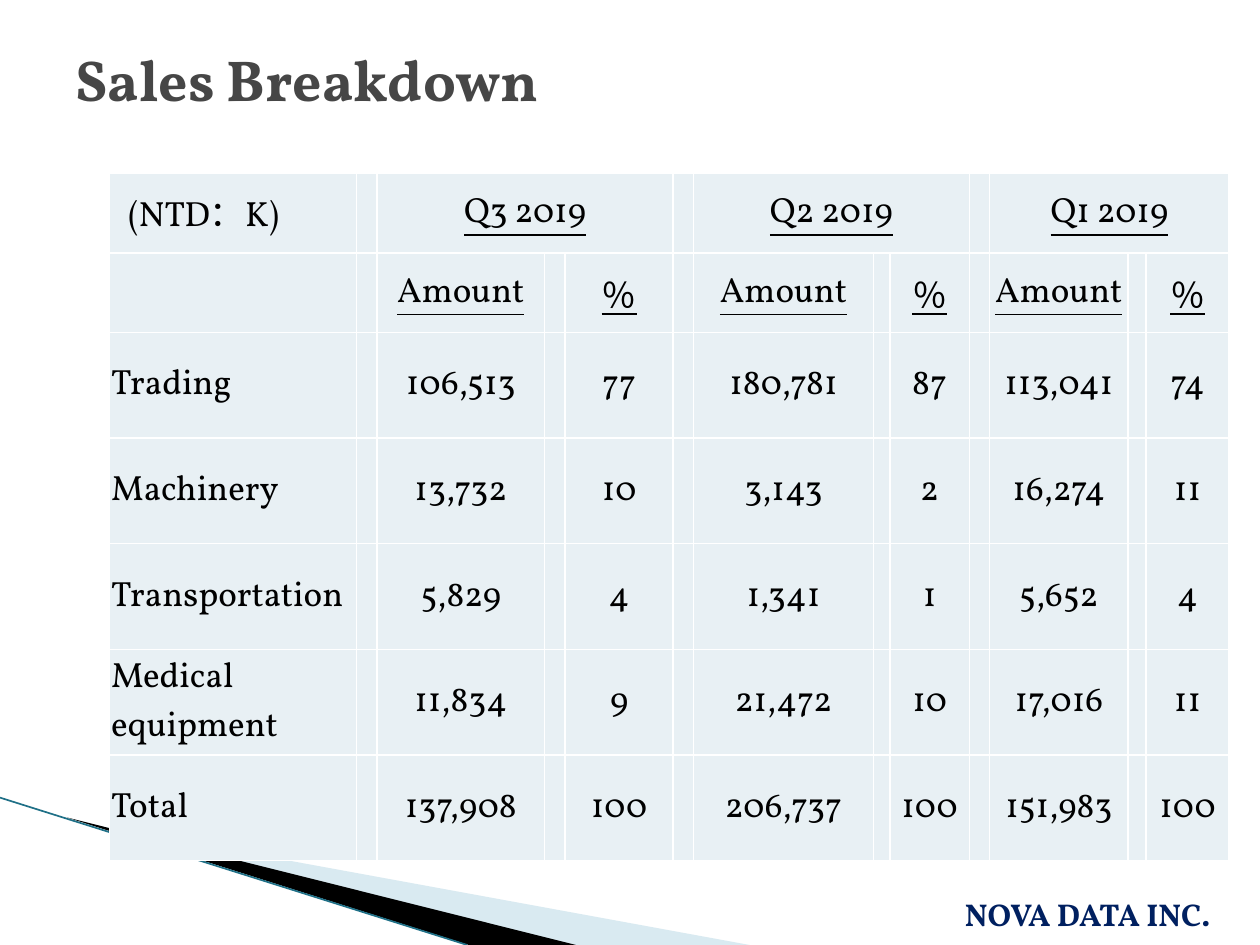
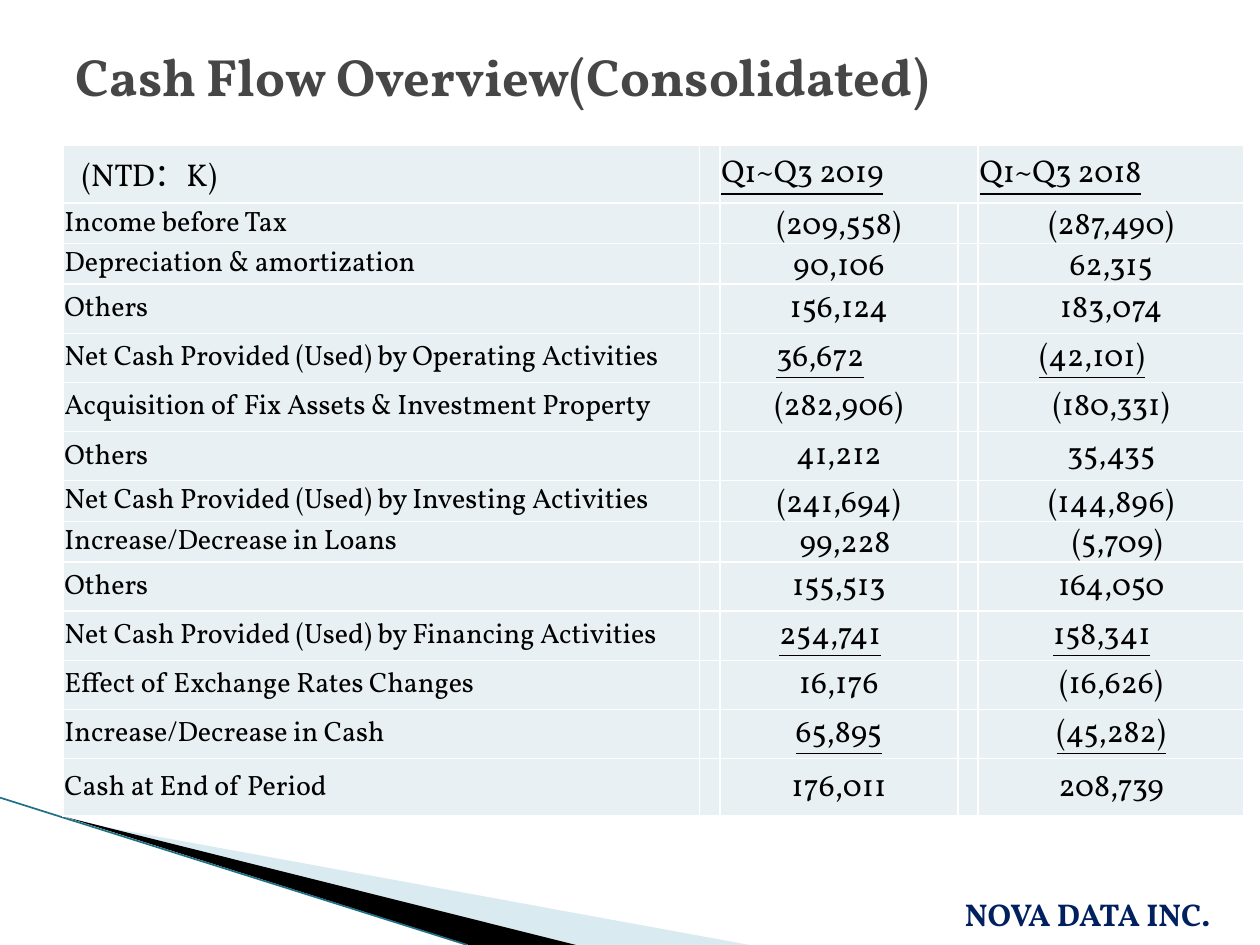
from lxml.etree import SubElement
from pptx import Presentation
from pptx.dml.color import RGBColor
from pptx.enum.shapes import MSO_CONNECTOR
from pptx.enum.text import MSO_ANCHOR, MSO_AUTO_SIZE, PP_ALIGN as AL
from pptx.oxml import parse_xml
from pptx.oxml.ns import nsdecls, qn
from pptx.util import Cm, Pt

COLORS = {"title": "464646", "brand": "002060", "text": "000000", "cell": "E8F0F4",
          "border": "FFFFFF", "wedge": "A0CBDC", "edge": "1F7087"}
FONT = "Vollkorn"
BRAND = "NOVA DATA INC."
INSET = 0.03


def color(name):
    return RGBColor.from_string(COLORS[name])


def write(tf, text, size=18, name="text", bold=False, underline=False, align=None, tab=None):
    """Write one formatted line; tab is the distance of a tab stop in cm."""
    p = tf.paragraphs[0]
    if tab:
        tabs = SubElement(p._p.get_or_add_pPr(), qn("a:tabLst"))
        SubElement(tabs, qn("a:tab"), pos=str(Cm(tab)), algn="l")
    p.alignment = align
    r = p.add_run()
    r.text = text
    r.font.name, r.font.size = FONT, Pt(size)
    r.font.bold, r.font.underline = bold, underline
    r.font.color.rgb = color(name)


class Deck:
    def __init__(self):
        self.prs = Presentation()
        self.prs.slide_width, self.prs.slide_height = Cm(25.4), Cm(19.05)
        self.s = None

    def slide(self, title, size):
        self.s = self.prs.slides.add_slide(self.prs.slide_layouts[5])
        self.corner()
        self.title(title, size)
        self.footer()

    def title(self, text, size):
        sp = self.s.shapes.title
        sp.left, sp.top, sp.width, sp.height = Cm(1.27), Cm(0.76), Cm(22.86), Cm(3.18)
        tf = sp.text_frame
        tf.auto_size, tf.vertical_anchor = MSO_AUTO_SIZE.NONE, MSO_ANCHOR.TOP
        write(tf, text, size, "title", bold=True, align=AL.LEFT)

    def footer(self):
        sp = self.s.shapes.add_textbox(Cm(19.2), Cm(17.91), Cm(6.02), Cm(1.02))
        sp.text_frame.word_wrap = True
        write(sp.text_frame, BRAND, 18, "brand", bold=True)

    def wedge(self, points, name, alpha=None):
        start, *rest = [(Cm(x), Cm(y)) for x, y in points]
        fb = self.s.shapes.build_freeform(*start)
        fb.add_line_segments(rest)
        sp = fb.convert_to_shape()
        sp.shadow.inherit = False
        sp.line.fill.background()
        sp.fill.solid()
        sp.fill.fore_color.rgb = color(name)
        if alpha:
            clr = sp.fill._xPr.find(".//" + qn("a:srgbClr"))
            SubElement(clr, qn("a:alpha"), val=str(alpha * 1000))

    def corner(self):
        self.wedge([(1.4, 16.54), (15.11, 19.05), (11.58, 19.05)], "wedge", alpha=40)
        self.wedge([(1.35, 16.48), (11.61, 19.05), (9.45, 19.05)], "text")
        line = self.s.shapes.add_connector(MSO_CONNECTOR.STRAIGHT, Cm(0), Cm(16.08),
                                           Cm(9.42), Cm(19.05))
        line.line.color.rgb = color("edge")
        line.line.width = Pt(0.95)
        SubElement(line._element.spPr, qn("a:effectLst"))

    def table(self, left, top, cols, rows):
        """Add a table of plain cells; cols and rows are sizes in cm."""
        frame = self.s.shapes.add_table(len(rows), len(cols), Cm(left), Cm(top),
                                        Cm(sum(cols)), Cm(sum(rows)))
        tbl = frame.table
        tbl.first_row = tbl.horz_banding = False
        for col, width in zip(tbl.columns, cols):
            col.width = Cm(width)
        for row, height in zip(tbl.rows, rows):
            row.height = Cm(height)
        for cell in tbl.iter_cells():
            cell.fill.solid()
            cell.fill.fore_color.rgb = color("cell")
            cell.vertical_anchor = MSO_ANCHOR.MIDDLE
            cell.margin_left = cell.margin_right = cell.margin_top = Cm(INSET)
            cell.margin_bottom = 0
            for i, side in enumerate("LRTB"):
                cell._tc.tcPr.insert(i, parse_xml(
                    f'<a:ln{side} {nsdecls("a")} w="12700"><a:solidFill>'
                    f'<a:srgbClr val="{COLORS["border"]}"/></a:solidFill></a:ln{side}>'))
        return tbl

    def cell(self, tbl, row, col, text, indent=INSET, span=1, **fmt):
        cell = tbl.cell(row, col)
        if span > 1:
            cell.merge(tbl.cell(row, col + span - 1))
        cell.margin_left = Cm(indent)
        write(cell.text_frame, text, **fmt)


def sales_slide(deck):
    deck.slide("Sales Breakdown", 33)
    cols = [4.98, 0.41, 3.38, 0.41, 2.18, 0.41, 3.63, 0.33, 1.6, 0.41, 2.79, 0.36, 1.68]
    tbl = deck.table(2.21, 3.5, cols, [1.6] * 2 + [2.13] * 5)
    head = dict(size=20, underline=True, align=AL.CENTER)

    # Two header rows: quarters, then amount and share
    deck.cell(tbl, 0, 0, "(NTD：K)", indent=0.38, size=20)
    for i, quarter in enumerate(["Q3 2019", "Q2 2019", "Q1 2019"]):
        col = 2 + 4 * i
        deck.cell(tbl, 0, col, quarter, span=3, **head)
        deck.cell(tbl, 1, col, "Amount", **head)
        deck.cell(tbl, 1, col + 2, "％", **head)

    # Underlined gaps between the headers
    for row, col in [(0, 5), (1, 3), (1, 5), (1, 7), (1, 11)]:
        deck.cell(tbl, row, col, "\t", size=20, underline=True, tab=cols[col] - 0.08)

    # Figures fill every second column
    sales = [
        ("Trading", "106,513", "77", "180,781", "87", "113,041", "74"),
        ("Machinery", "13,732", "10", "3,143", "2", "16,274", "11"),
        ("Transportation", "5,829", "4", "1,341", "1", "5,652", "4"),
        ("Medical equipment", "11,834", "9", "21,472", "10", "17,016", "11"),
        ("Total", "137,908", "100", "206,737", "100", "151,983", "100"),
    ]
    for row, values in enumerate(sales, 2):
        for i, value in enumerate(values):
            deck.cell(tbl, row, 2 * i, value, size=20, align=AL.CENTER if i else AL.JUSTIFY)


def cash_flow_slide(deck):
    deck.slide("Cash Flow Overview(Consolidated)", 30)
    short, normal, tall = 0.82, 0.99, 1.16
    rows = ([tall] + [short] * 2 + [normal] * 4 + [short] * 2 + [normal] * 4 + [tall])
    tbl = deck.table(1.27, 2.93, [12.83, 0.41, 4.8, 0.41, 5.36], rows)

    # Header row
    deck.cell(tbl, 0, 0, "(NTD：K)", indent=0.38)
    deck.cell(tbl, 0, 2, "Q1~Q3 2019", span=2, underline=True)
    deck.cell(tbl, 0, 4, "Q1~Q3 2018", underline=True)

    # Label, 2019, 2018
    flows = [
        ("Income before Tax", "(209,558)", "(287,490)"),
        ("Depreciation & amortization", "90,106", "62,315"),
        ("Others", "156,124", "183,074"),
        ("Net Cash Provided (Used) by Operating Activities", "36,672", "(42,101)"),
        ("Acquisition of Fix Assets & Investment Property", "(282,906)", "(180,331)"),
        ("Others", "41,212", "35,435"),
        ("Net Cash Provided (Used) by Investing Activities", "(241,694)", "(144,896)"),
        ("Increase/Decrease in Loans", "99,228", "(5,709)"),
        ("Others", "155,513", "164,050"),
        ("Net Cash Provided (Used) by Financing Activities", "254,741", "158,341"),
        ("Effect of Exchange Rates Changes", "16,176", "(16,626)"),
        ("Increase/Decrease in Cash", "65,895", "(45,282)"),
        ("Cash at End of Period", "176,011", "208,739"),
    ]
    subtotals = {4, 7, 10, 12}
    # Underlines that run past the figure: indent and length in cm
    long_rules = {(4, 2): (1.14, 2.52), (4, 4): (1.23, 2.9),
                  (10, 2): (1.2, 2.42), (10, 4): (1.51, 2.34)}
    loans_row = 8
    for row, (label, *values) in enumerate(flows, 1):
        deck.cell(tbl, row, 0, label, size=16)
        for col, value in zip((2, 4), values):
            if (row, col) in long_rules:
                indent, length = long_rules[row, col]
                deck.cell(tbl, row, col, value + "\t", indent=indent, underline=True, tab=length)
            else:
                deck.cell(tbl, row, col, value, indent=0.28 if row == loans_row else INSET,
                          underline=row in subtotals, align=AL.CENTER)


def main():
    deck = Deck()
    sales_slide(deck)
    cash_flow_slide(deck)
    deck.prs.save("out.pptx")


if __name__ == "__main__":
    main()
